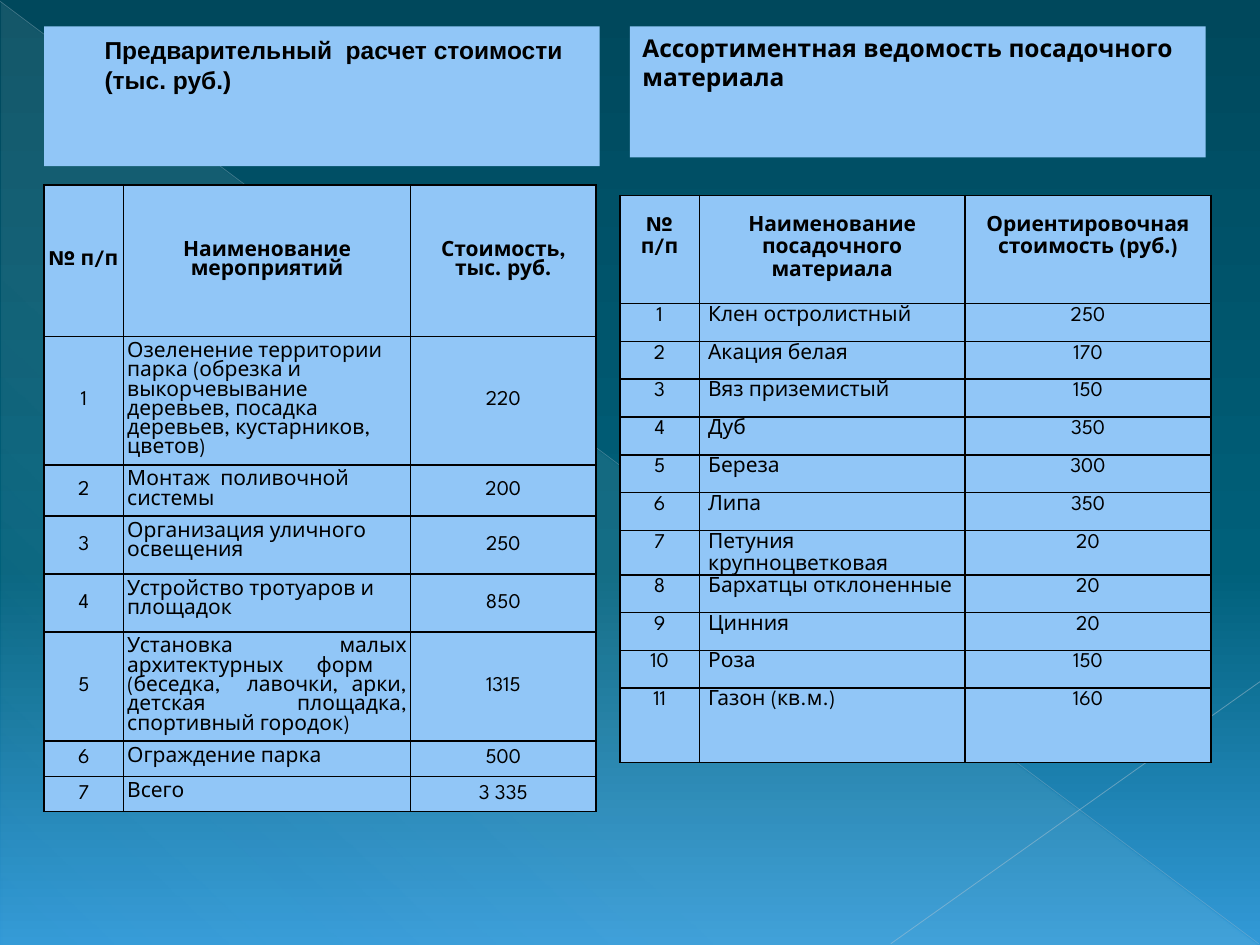
from lxml import etree
from pptx import Presentation
from pptx.dml.color import RGBColor
from pptx.enum.shapes import MSO_CONNECTOR, MSO_SHAPE
from pptx.enum.text import MSO_ANCHOR, MSO_AUTO_SIZE, PP_ALIGN
from pptx.oxml import parse_xml
from pptx.oxml.ns import nsdecls, qn
from pptx.util import Inches, Pt

LEFT, CENTER, JUSTIFY = PP_ALIGN.LEFT, PP_ALIGN.CENTER, PP_ALIGN.JUSTIFY
TOP, MIDDLE = MSO_ANCHOR.TOP, MSO_ANCHOR.MIDDLE
RECT, TRIANGLE = MSO_SHAPE.RECTANGLE, MSO_SHAPE.RIGHT_TRIANGLE
STRAIGHT, NO_FIT = MSO_CONNECTOR.STRAIGHT, MSO_AUTO_SIZE.NONE
TITLE_ONLY = 5

COSTS = [
    ("№ п/п", "Наименование мероприятий", "Стоимость,\nтыс. руб."),
    ("1", "Озеленение территории парка (обрезка и выкорчевывание деревьев, "
          "посадка деревьев, кустарников, цветов)", "220"),
    ("2", "Монтаж  поливочной системы", "200"),
    ("3", "Организация уличного освещения", "250"),
    ("4", "Устройство тротуаров и площадок", "850"),
    ("5", "Установка малых архитектурных форм  (беседка,  лавочки, арки, "
          "детская площадка, спортивный городок)", "1315"),
    ("6", "Ограждение парка", "500"),
    ("7", "Всего", "3 335"),
]
PLANTS = [
    ("№ п/п", "Наименование посадочного материала",
     "Ориентировочная стоимость (руб.)"),
    ("1", "Клен остролистный", "250"),
    ("2", "Акация белая", "170"),
    ("3", "Вяз приземистый", "150"),
    ("4", "Дуб", "350"),
    ("5", "Береза", "300"),
    ("6", "Липа", "350"),
    ("7", "Петуния крупноцветковая", "20"),
    ("8", "Бархатцы отклоненные", "20"),
    ("9", "Цинния", "20"),
    ("10", "Роза", "150"),
    ("11", "Газон (кв.м.)", "160"),
]


def rgb(value):
    return RGBColor.from_string(value)


def grid(*units):
    return [Inches(u / 10) for u in units]


def apply(target, values):
    for name, value in values.items():
        setattr(target, name, value)


class Board:
    panel, ink, font = "91C6F7", "000000", "League Spartan"

    def __init__(self, prs):
        self.s = prs.slides.add_slide(prs.slide_layouts[TITLE_ONLY])

    def gradient(self, fill, owner, stops, angle):
        fill.gradient()
        old = owner.find(".//" + qn("a:gradFill"))
        marks = "".join(
            f'<a:gs pos="{pos * 1000}"><a:srgbClr val="{color}">'
            f'<a:alpha val="{alpha * 1000}"/></a:srgbClr></a:gs>'
            for pos, color, alpha in stops)
        old.getparent().replace(old, parse_xml(
            f'<a:gradFill {nsdecls("a")} rotWithShape="1"><a:gsLst>{marks}</a:gsLst>'
            f'<a:lin ang="{angle * 60000}" scaled="0"/></a:gradFill>'))

    def backdrop(self, stops):
        self.gradient(self.s.background.fill, self.s.element, stops, 90)

    def triangle(self, box, stops, angle):
        sp = self.s.shapes.add_shape(TRIANGLE, *grid(*box))
        sp.shadow.inherit = False
        sp.line.fill.background()
        self.gradient(sp.fill, sp.element, stops, angle)

    def line(self, ends, color, width, alpha):
        ln = self.s.shapes.add_connector(STRAIGHT, *grid(*ends))
        ln.line.color.rgb = rgb(color)
        ln.line.width = Pt(width)
        clr = ln.element.find(".//" + qn("a:srgbClr"))
        etree.SubElement(clr, qn("a:alpha")).set("val", str(alpha * 1000))
        etree.SubElement(ln.element.spPr, qn("a:effectLst"))

    def put_text(self, tf, text, align, size, bold, font=None, spacing=1.0):
        tf.text = text
        for p in tf.paragraphs:
            apply(p, {"alignment": align, "line_spacing": spacing})
            for r in p.runs:
                apply(r.font, {"name": font or self.font, "size": Pt(size),
                               "bold": bold})
                r.font.color.rgb = rgb(self.ink)

    def heading(self, sp, box, text, font=None, left=1.0, top=0.5):
        apply(sp, dict(zip(("left", "top", "width", "height"), grid(*box))))
        sp.fill.solid()
        sp.fill.fore_color.rgb = rgb(self.panel)
        sp.line.fill.background()
        tf = sp.text_frame
        margin_left, margin_top = grid(left, top)
        apply(tf, {"word_wrap": True, "auto_size": NO_FIT, "vertical_anchor": TOP,
                   "margin_left": margin_left, "margin_top": margin_top})
        self.put_text(tf, text, LEFT, 14, True, font)

    def title(self, box, text, **style):
        sp = self.s.shapes.title
        sp.element.getparent().append(sp.element)
        self.heading(sp, box, text, **style)

    def subtitle(self, box, text):
        sp = self.s.shapes.add_shape(RECT, *grid(*box))
        sp.shadow.inherit = False
        self.heading(sp, box, text)

    def borders(self, cell):
        for side in ("lnL", "lnR", "lnT", "lnB"):
            cell._tc.get_or_add_tcPr().append(parse_xml(
                f'<a:{side} {nsdecls("a")} w="12700"><a:solidFill>'
                f'<a:srgbClr val="{self.ink}"/></a:solidFill></a:{side}>'))

    def table(self, origin, cols, heights, data, pad, anchors, spacing=1.0,
              head_top=None, justified=()):
        size = (sum(cols), sum(heights))
        tbl = self.s.shapes.add_table(
            len(data), len(cols), *grid(*origin, *size)).table
        apply(tbl, {"first_row": False, "horz_banding": False})
        for col, width in zip(tbl.columns, grid(*cols)):
            col.width = width
        for row, height in zip(tbl.rows, grid(*heights)):
            row.height = height
        side, edge = grid(*pad)
        for i, record in enumerate(data):
            for j, text in enumerate(record):
                cell = tbl.cell(i, j)
                head, name = i == 0, i > 0 and j == 1
                self.borders(cell)
                cell.fill.solid()
                cell.fill.fore_color.rgb = rgb(self.panel)
                top = Inches(head_top) if head and head_top else edge
                apply(cell, {"margin_left": side, "margin_right": side,
                             "margin_top": top, "margin_bottom": edge,
                             "vertical_anchor": anchors[name]})
                align = CENTER
                if name:
                    align = JUSTIFY if i in justified else LEFT
                self.put_text(cell.text_frame, text, align, 12, head,
                              spacing=spacing)


def main():
    prs = Presentation()
    prs.slide_width, prs.slide_height = grid(100, 75)
    board = Board(prs)
    board.backdrop([(0, "00485C", 100), (60, "00607A", 100), (100, "3299D7", 100)])
    board.triangle((0.1, 0.2, 99.8, 74.8),
                   [(0, "DBF5F9", 10), (70, "DBF5F9", 8), (100, "DBF5F9", 1)], 133)
    board.line((0, 0.1, 99.9, 74.9), "ACC0CE", 0.39, 35)
    board.line((100, 54.1, 70.7, 74.9), "B5C7D3", 0.47, 45)
    board.table((3.5, 14.7), (6.3, 22.8, 14.7),
                (12, 8.1, 2.8, 4.6, 4.6, 8.1, 2.8, 2.8), COSTS, (0.3, 0.5),
                (MIDDLE, TOP), justified=(5, 6, 7))
    board.table((49.2, 15.5), (6.3, 21.1, 19.5), (8.6, *[3] * 10, 5.9),
                PLANTS, (0.7, 0), (TOP, TOP), spacing=1.15, head_top=0.15)
    board.title((3.5, 2.1, 44.1, 11.1),
                "Предварительный  расчет стоимости\n(тыс. руб.)",
                font="Arial", left=4.8, top=0.7)
    board.subtitle((50, 2.1, 45.7, 10.4),
                   "Ассортиментная ведомость посадочного материала")
    prs.save("out.pptx")


if __name__ == "__main__":
    main()
